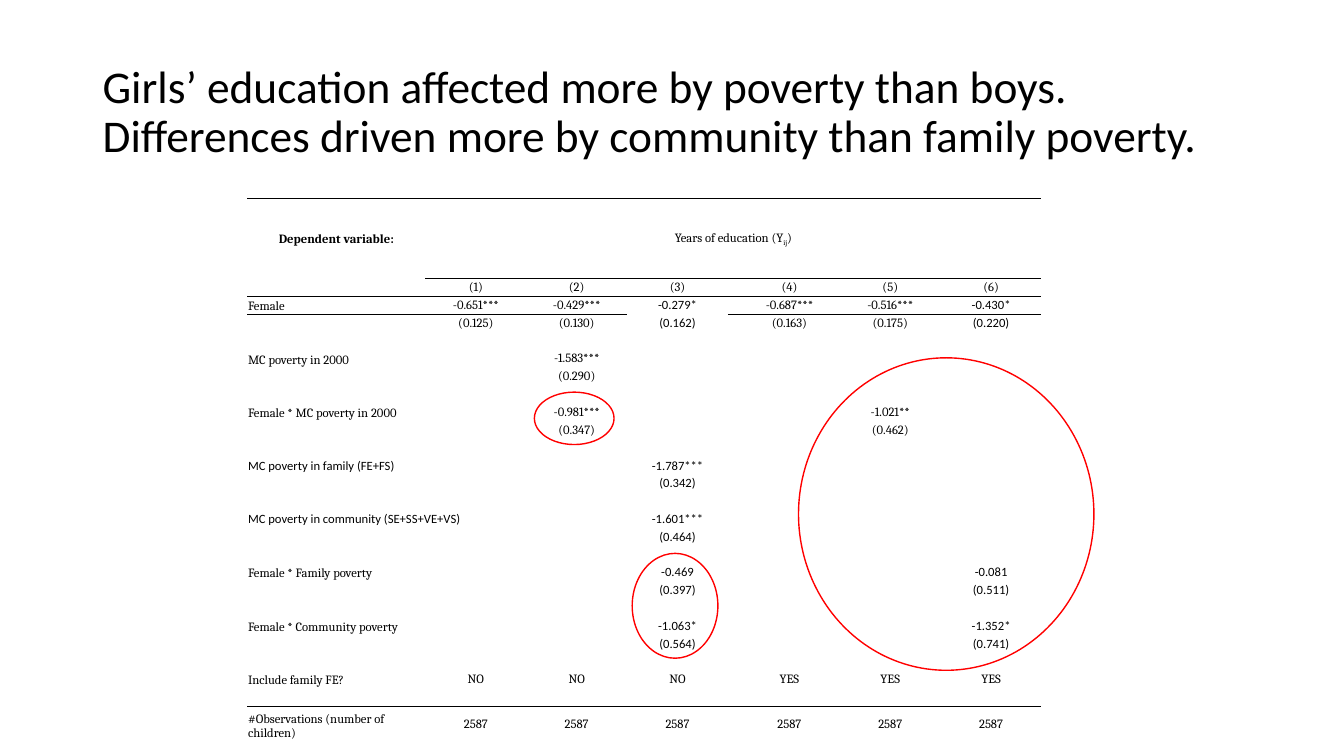
from lxml.etree import SubElement
from pptx import Presentation
from pptx.dml.color import RGBColor
from pptx.enum.shapes import MSO_SHAPE
from pptx.enum.text import MSO_ANCHOR, PP_ALIGN
from pptx.oxml.ns import qn
from pptx.util import Inches, Pt

COLORS = {"text": "000000", "rule": "000000", "highlight": "FF0000"}
NO_GRID_STYLE = "{2D5ABB26-0587-4C30-8999-92F81FD0307C}"

# Each block takes three rows: values, standard errors, gap
blocks = [
    ("Female", {1: ("-0.651***", "(0.125)"), 2: ("-0.429***", "(0.130)"),
                3: ("-0.279*", "(0.162)"), 5: ("-0.687***", "(0.163)"),
                6: ("-0.516***", "(0.175)"), 7: ("-0.430*", "(0.220)")}),
    ("MC poverty in 2000", {2: ("-1.583***", "(0.290)")}),
    ("Female * MC poverty in 2000", {2: ("-0.981***", "(0.347)"),
                                     6: ("-1.021**", "(0.462)")}),
    ("MC poverty in family (FE+FS)", {3: ("-1.787***", "(0.342)")}),
    ("MC poverty in community (SE+SS+VE+VS)", {3: ("-1.601***", "(0.464)")}),
    ("Female * Family poverty", {3: ("-0.469", "(0.397)"), 7: ("-0.081", "(0.511)")}),
    ("Female * Community poverty", {3: ("-1.063*", "(0.564)"), 7: ("-1.352*", "(0.741)")}),
]
wide_labels = [8, 11, 14, 20]
sans_labels = [11, 14]
middle_labels = [0, 11, 14]
model_cols = [1, 2, 3, 5, 6, 7]
N_ROWS, N_COLS = 26, 8
FAMILY_FE, OBSERVATIONS = 23, 25

texts = {(0, 0): "Dependent variable:", (OBSERVATIONS, 0): "#Observations (number of children)",
         (FAMILY_FE, 0): "Include family FE?"}
for number, col in enumerate(model_cols, 1):
    texts[1, col] = f"({number})"
    texts[FAMILY_FE, col] = "NO" if number <= 3 else "YES"
    texts[OBSERVATIONS, col] = "2587"
for i, (label, estimates) in enumerate(blocks):
    row = 2 + 3 * i
    texts[row, 0] = label
    for col, (value, error) in estimates.items():
        texts[row, col], texts[row + 1, col] = value, error

# Columns ruled beneath each row; -1 is the top edge of the table
rules = {-1: range(N_COLS), 0: range(1, N_COLS), 1: [0, 1, 2, 4, 5, 6, 7],
         24: range(N_COLS)}


def format_run(r, size, font, bold=False):
    r.font.size, r.font.name, r.font.bold = Pt(size), font, bold
    r.font.color.rgb = RGBColor.from_string(COLORS["text"])


def add_border(cell, tag):
    """Draw a thin rule on one cell edge, a:lnT or a:lnB."""
    ln = SubElement(cell._tc.get_or_add_tcPr(), qn(tag), w=str(Pt(0.5)))
    fill = SubElement(ln, qn("a:solidFill"))
    SubElement(fill, qn("a:srgbClr"), val=COLORS["rule"])


prs = Presentation()
prs.slide_width, prs.slide_height = Inches(13.33), Inches(7.5)
s = prs.slides.add_slide(prs.slide_layouts[6])

title = s.shapes.add_textbox(Inches(0.92), Inches(0.4), Inches(11.5), Inches(1.45))
tf = title.text_frame
tf.word_wrap = True
tf.vertical_anchor = MSO_ANCHOR.MIDDLE
tf.text = ("Girls’ education affected more by poverty than boys.\v"
           "Differences driven more by community than family poverty.")
p = tf.paragraphs[0]
p.line_spacing = 0.9
for r in p.runs:
    format_run(r, 32.4, "Calibri")

frame = s.shapes.add_table(N_ROWS, N_COLS, Inches(2.45), Inches(1.97),
                           Inches(7.88), Inches(5.39))
table = frame.table
table.first_row = table.horz_banding = False
table._tbl.tblPr.find(qn("a:tableStyleId")).text = NO_GRID_STYLE
for col, width in enumerate([1.77, 1, 1, 1, 0.11, 1, 1, 1]):
    table.columns[col].width = Inches(width)
for row in table.rows:
    row.height = Inches(4.25 / 24)
table.rows[0].height = Inches(0.79)
table.rows[OBSERVATIONS].height = Inches(0.35)

for row in range(N_ROWS):
    for col in range(N_COLS):
        cell = table.cell(row, col)
        cell.margin_left = cell.margin_right = cell.margin_top = Inches(0.01)
        cell.margin_bottom = 0
        is_label = col == 0 and row > 0
        bottom = is_label and row not in middle_labels
        cell.vertical_anchor = MSO_ANCHOR.BOTTOM if bottom else MSO_ANCHOR.MIDDLE
        if col in rules.get(row - 1, []):
            add_border(cell, "a:lnT")
        if col in rules.get(row, []):
            add_border(cell, "a:lnB")
        cell.fill.background()
        p = cell.text_frame.paragraphs[0]
        p.alignment = PP_ALIGN.LEFT if is_label else PP_ALIGN.CENTER
        if (row, col) in texts:
            p.text = texts[row, col]
            sans = row in sans_labels if is_label else col in (3, 7) and 2 <= row < FAMILY_FE
            format_run(p.runs[0], 9, "Calibri" if sans else "Cambria", bold=(row, col) == (0, 0))
        else:
            SubElement(p._p, qn("a:endParaRPr"), sz="900")

p = table.cell(0, 1).text_frame.paragraphs[0]
p.clear()
for text, baseline in [("Years of education (Y", 0), ("ij", -25000), (")", 0)]:
    r = p.add_run()
    r.text = text
    format_run(r, 9, "Cambria")
    r._r.get_or_add_rPr().set("baseline", str(baseline))
table.cell(0, 1).merge(table.cell(0, 7))
for row in wide_labels:
    table.cell(row, 0).merge(table.cell(row, 1))

for box in [(5.3, 3.89, 0.79, 0.52), (6.27, 5.49, 0.85, 1.04), (7.92, 3.55, 2.93, 3.1)]:
    sp = s.shapes.add_shape(MSO_SHAPE.OVAL, *map(Inches, box))
    sp.shadow.inherit = False
    sp.fill.background()
    sp.line.color.rgb = RGBColor.from_string(COLORS["highlight"])
    sp.line.width = Pt(1)

prs.save("out.pptx")
